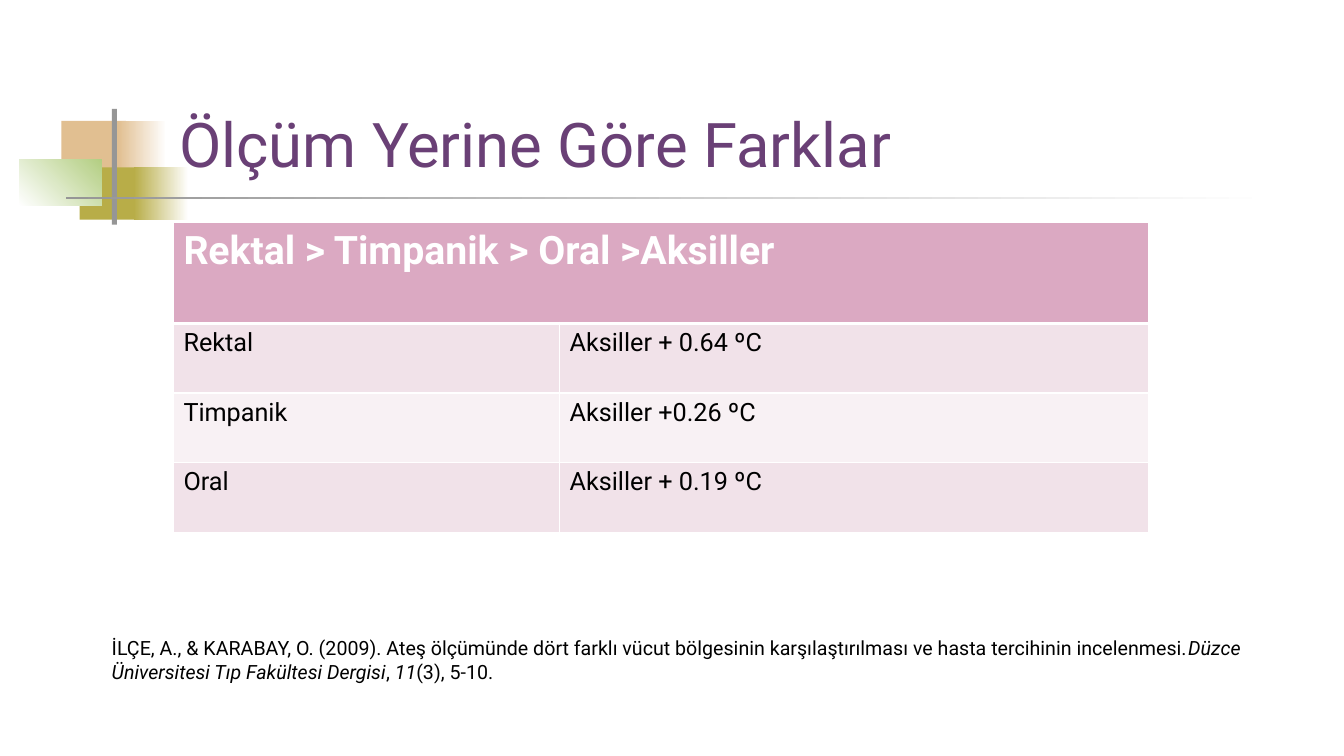
from dataclasses import dataclass
from typing import Optional

from lxml.etree import SubElement
from pptx import Presentation
from pptx.dml.color import RGBColor as RGB
from pptx.enum.shapes import MSO_SHAPE as Shape
from pptx.enum.text import MSO_ANCHOR as Anchor, MSO_AUTO_SIZE as AutoSize, PP_ALIGN as Align
from pptx.oxml.ns import qn
from pptx.util import Inches, Pt

FONT = "Roboto"
COLORS = {
    "white": "FFFFFF", "black": "000000", "title": "6A4076",
    "orange": "E1BF91", "gold": "B8AD48", "green": "B3CE82", "gray": "969696",
    "header": "DBA9C2", "odd": "F1E2E9", "even": "F8F1F4",
}


@dataclass
class Block:
    left: float
    top: float
    width: float
    height: float
    color: str
    fade_to: Optional[str] = None
    angle: float = 0


BLOCKS = [
    Block(0.61, 1.2, 0.64, 0.52, "orange"),
    Block(1.17, 1.2, 0.48, 0.52, "orange", "white"),
    Block(0.79, 1.66, 0.61, 0.52, "gold"),
    Block(1.33, 1.66, 0.54, 0.52, "gold", "white"),
    Block(0.19, 1.58, 0.82, 0.46, "white", "green", 45),
    Block(1.11, 1.08, 0.05, 1.15, "gray"),
    Block(0.65, 1.95, 11.99, 0.03, "gray", "white"),
]
HEADER = "Rektal > Timpanik > Oral >Aksiller"
ROWS = [
    (HEADER, ""),
    ("Rektal", "Aksiller + 0.64 ºC"),
    ("Timpanik", "Aksiller +0.26 ºC"),
    ("Oral", "Aksiller + 0.19 ºC"),
]
COL_WIDTHS = (3.83, 5.84)
HEADER_HEIGHT, ROW_HEIGHT = 1.0, 0.69
CITATION = [
    ("İLÇE, A., & KARABAY, O. (2009). Ateş ölçümünde dört farklı vücut bölgesinin "
     "karşılaştırılması ve hasta tercihinin incelenmesi.", False),
    ("Düzce Üniversitesi Tıp Fakültesi Dergisi", True),
    (", ", False),
    ("11", True),
    ("(3), 5-10.", False),
]


def rgb(name: str) -> RGB:
    return RGB.from_string(COLORS[name])


def add_run(p, text: str, size: float, color: str, **extra) -> None:
    r = p.add_run()
    r.text = text
    for key, value in {"name": FONT, "size": Pt(size), **extra}.items():
        setattr(r.font, key, value)
    r.font.color.rgb = rgb(color)


def add_block(s, b: Block) -> None:
    sp = s.shapes.add_shape(Shape.RECTANGLE, *map(Inches, (b.left, b.top, b.width, b.height)))
    sp.shadow.inherit = False
    sp.line.fill.background()
    if b.fade_to:
        sp.fill.gradient()
        sp.fill.gradient_angle = b.angle
        for stop, color in zip(sp.fill.gradient_stops, (b.color, b.fade_to)):
            stop.color.rgb = rgb(color)
    else:
        sp.fill.solid()
        sp.fill.fore_color.rgb = rgb(b.color)


def add_borders(cell, top: float, bottom: float) -> None:
    """Draw white borders; must run before the cell fill is set."""
    tcPr = cell._tc.get_or_add_tcPr()
    for side, width in {"L": 1, "R": 1, "T": top, "B": bottom}.items():
        ln = SubElement(tcPr, qn(f"a:ln{side}"), w=str(Pt(width)))
        fill = SubElement(ln, qn("a:solidFill"))
        SubElement(fill, qn("a:srgbClr"), val=COLORS["white"])


def add_title(s, text: str) -> None:
    title = s.shapes.title
    box = {"left": 1.68, "top": 0.23, "width": 11.36, "height": 1.6}
    for key, value in box.items():
        setattr(title, key, Inches(value))
    tf = title.text_frame
    for key, value in {"vertical_anchor": Anchor.BOTTOM, "auto_size": AutoSize.NONE,
                       "word_wrap": True}.items():
        setattr(tf, key, value)
    p = tf.paragraphs[0]
    p.alignment = Align.LEFT
    add_run(p, text, 44, "title")
    s.shapes._spTree.append(title._element)


def add_differences(s) -> None:
    heights = [HEADER_HEIGHT] + [ROW_HEIGHT] * (len(ROWS) - 1)
    frame = s.shapes.add_table(len(ROWS), len(COL_WIDTHS), Inches(1.72), Inches(2.21),
                               Inches(sum(COL_WIDTHS)), Inches(sum(heights)))
    table = frame.table
    for col, width in zip(table.columns, COL_WIDTHS):
        col.width = Inches(width)
    table.cell(0, 0).merge(table.cell(0, 1))
    for i, (texts, height) in enumerate(zip(ROWS, heights)):
        table.rows[i].height = Inches(height)
        size, color = (28, "white") if i == 0 else (18, "black")
        fill = "header" if i == 0 else "odd" if i % 2 else "even"
        for j, text in enumerate(texts):
            cell = table.cell(i, j)
            add_borders(cell, 3 if i == 1 else 1, 3 if i == 0 else 1)
            cell.fill.solid()
            cell.fill.fore_color.rgb = rgb(fill)
            if text:
                add_run(cell.text_frame.paragraphs[0], text, size, color, bold=i == 0)


def add_citation(s) -> None:
    tf = s.shapes.add_textbox(*map(Inches, (1.01, 6.26, 12.03, 0.88))).text_frame
    tf.word_wrap = True
    for text, italic in CITATION:
        add_run(tf.paragraphs[0], text, 14, "black", italic=italic)


def main() -> None:
    prs = Presentation()
    prs.slide_width, prs.slide_height = Inches(13.33), Inches(7.5)
    s = prs.slides.add_slide(prs.slide_layouts.get_by_name("Title Only"))
    for block in BLOCKS:
        add_block(s, block)
    add_title(s, "Ölçüm Yerine Göre Farklar")
    add_differences(s)
    add_citation(s)
    prs.save("out.pptx")


if __name__ == "__main__":
    main()
